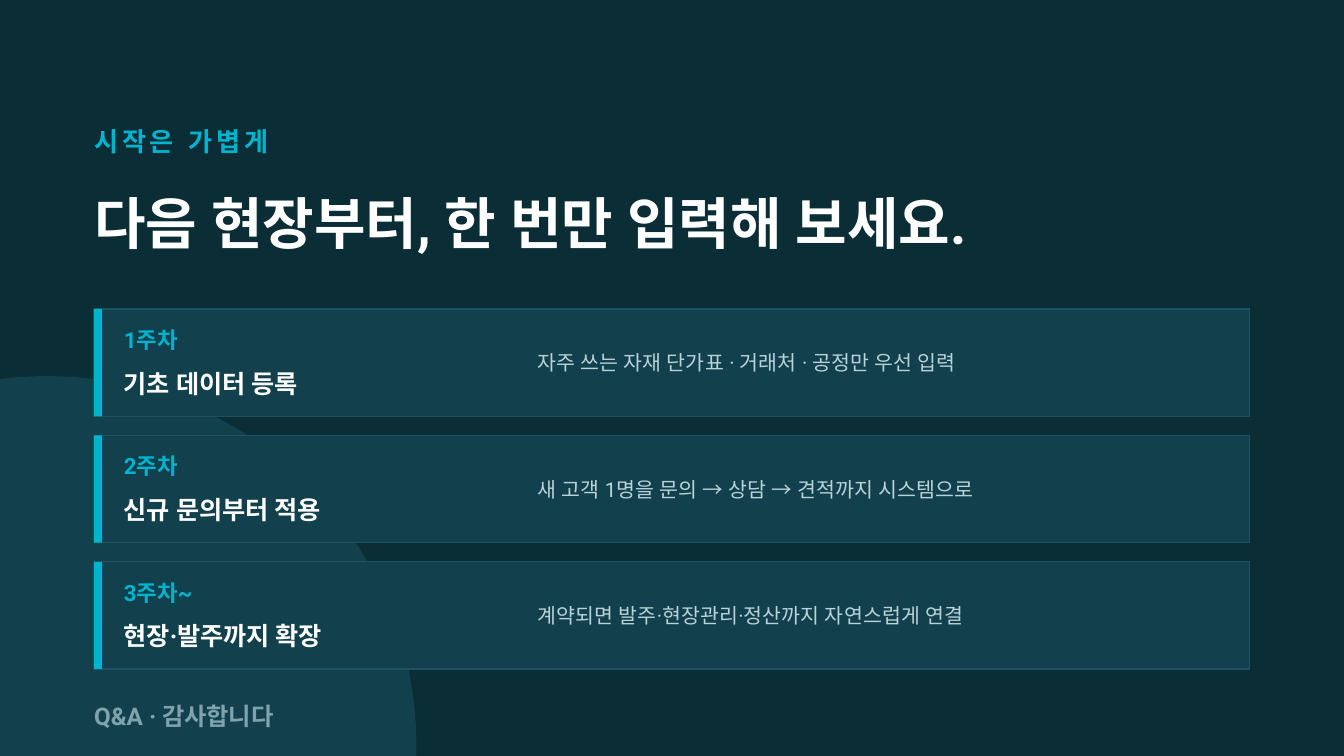
from pptx import Presentation
from pptx import util as u
from pptx.dml.color import RGBColor
from pptx.enum import shapes, text
from pptx.oxml.ns import qn
from lxml import etree

FONT = "Roboto"
NIGHT, TEAL, EDGE, CYAN = "0B2E36", "12414D", "1E5260", "00B3CE"
WHITE, MIST, SLATE = "FFFFFF", "B9D3DA", "7FA3AD"

KICKER = "시작은 가볍게"
HEADLINE = "다음 현장부터, 한 번만 입력해 보세요."
CLOSING = "Q&A · 감사합니다"
STEPS = [
    ("1주차", "기초 데이터 등록", "자주 쓰는 자재 단가표 · 거래처 · 공정만 우선 입력"),
    ("2주차", "신규 문의부터 적용", "새 고객 1명을 문의 → 상담 → 견적까지 시스템으로"),
    ("3주차~", "현장·발주까지 확장", "계약되면 발주·현장관리·정산까지 자연스럽게 연결"),
]

LEFT, CARD_WIDTH, CARD_HEIGHT = 1.78, 21.84, 2.03
FIRST_TOP, PITCH = 5.84, 2.39
LABEL_LEFT, DETAIL_LEFT = 2.34, 10.16


def paint(color_format, hex_color):
    color_format.rgb = RGBColor.from_string(hex_color)


def lengths(*values):
    return [u.Cm(value) for value in values]


def write(box, wording, size, color, bold=True, spacing=0):
    frame = box.text_frame
    frame.text = wording
    frame.word_wrap = True
    frame.auto_size = text.MSO_AUTO_SIZE.NONE
    frame.vertical_anchor = text.MSO_ANCHOR.MIDDLE
    frame.margin_left = frame.margin_top = frame.margin_right = frame.margin_bottom = 0
    paragraph = frame.paragraphs[0]
    paragraph.alignment = text.PP_ALIGN.LEFT
    font = paragraph.font
    font.name, font.size, font.bold = FONT, u.Pt(size), bold
    paint(font.color, color)
    properties = paragraph._p.pPr.find(qn("a:defRPr"))
    etree.SubElement(properties, qn("a:ea")).set("typeface", FONT)
    if spacing:
        properties.set("spc", str(spacing * 100))


def add_text(slide, place, *style, **options):
    write(slide.shapes.add_textbox(*lengths(*place)), *style, **options)


def add_block(slide, kind, place, fill, edge=None):
    block = slide.shapes.add_shape(kind, *lengths(*place))
    block.shadow.inherit = False
    block.fill.solid()
    paint(block.fill.fore_color, fill)
    if edge:
        paint(block.line.color, edge)
        block.line.width = u.Pt(0.75)
    else:
        block.line.fill.background()


def add_step(slide, top, week, task, detail):
    rectangle = shapes.MSO_SHAPE.RECTANGLE
    add_block(slide, rectangle, (LEFT, top, CARD_WIDTH, CARD_HEIGHT), TEAL, EDGE)
    add_block(slide, rectangle, (LEFT, top, 0.15, CARD_HEIGHT), CYAN)
    add_text(slide, (LABEL_LEFT, top + 0.2, 2.54, 0.76), week, 12, CYAN)
    add_text(slide, (LABEL_LEFT, top + 0.97, 8.64, 0.86), task, 13.5, WHITE)
    add_text(slide, (DETAIL_LEFT, top, 12.95, CARD_HEIGHT), detail, 11, MIST, bold=False)


def main():
    deck = Presentation()
    deck.slide_width, deck.slide_height = lengths(25.4, 14.29)
    slide = deck.slides.add_slide(deck.slide_layouts[5])
    slide.background.fill.solid()
    paint(slide.background.fill.fore_color, NIGHT)

    add_block(slide, shapes.MSO_SHAPE.OVAL, (-6.1, 7.11, 13.97, 13.97), TEAL)
    add_text(slide, (LEFT, 2.16, 20.32, 1.02), KICKER, 14, CYAN, spacing=2)
    title = slide.shapes.title
    title.left, title.top, title.width, title.height = lengths(LEFT, 3.3, 22.35, 1.78)
    write(title, HEADLINE, 30, WHITE)
    for index, step in enumerate(STEPS):
        add_step(slide, FIRST_TOP + index * PITCH, *step)
    add_text(slide, (LEFT, 13.08, 20.32, 0.89), CLOSING, 13, SLATE)

    deck.save("out.pptx")


if __name__ == "__main__":
    main()
